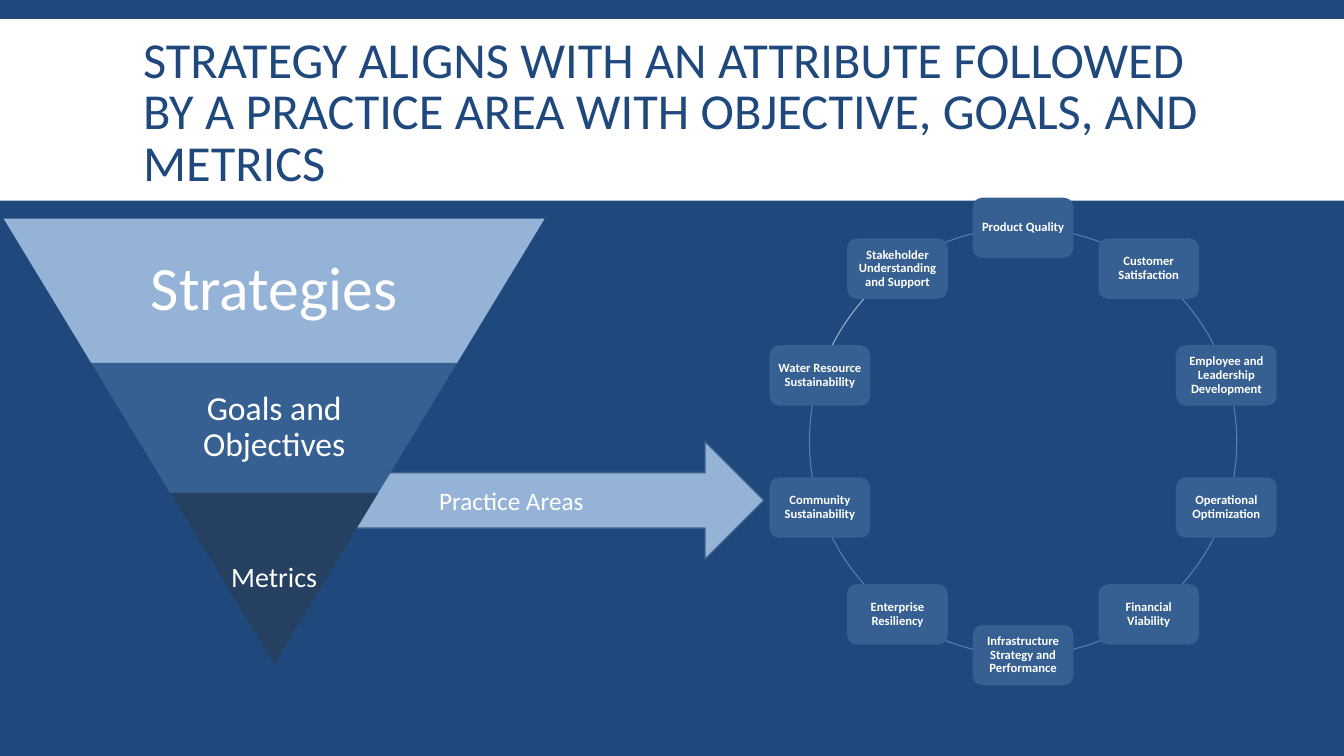
from math import cos, radians, sin

from pptx import Presentation
from pptx.dml.color import RGBColor
from pptx.enum.shapes import MSO_SHAPE
from pptx.enum.text import MSO_ANCHOR, MSO_AUTO_SIZE, PP_ALIGN
from pptx.util import Inches, Pt

NAVY = RGBColor(0x1F, 0x49, 0x7D)
WHITE = RGBColor(0xFF, 0xFF, 0xFF)
SKY = RGBColor(0x95, 0xB3, 0xD7)
STEEL = RGBColor(0x37, 0x60, 0x92)
MIDNIGHT = RGBColor(0x25, 0x40, 0x61)
OUTLINE = RGBColor(0x3A, 0x5F, 0x8C)
RING_BLUE = RGBColor(0x4F, 0x81, 0xBD)

COLUMNS, ROWS = 40, 22.5

# Funnel: name, height in rows, fill, text size, inset, text share of width
FUNNEL_CENTRE, FUNNEL_TOP, FUNNEL_SLOPE = 8.16, 6.51, 0.607
FUNNEL_LAYERS = [
    ("Strategies", 4.29, SKY, 44, 0.06, 0.65),
    ("Goals and Objectives", 3.87, STEEL, 24, 0.03, 0.65),
    ("Metrics", 5.1, MIDNIGHT, 20, 0.03, 1),
]

# Ring of attributes, clockwise from the top
RING_X, RING_Y, RING_RADIUS = 30.45, 13.14, 6.36
CARD_WIDTH, CARD_HEIGHT = 3, 1.8
ATTRIBUTES = [
    "Product Quality",
    "Customer Satisfaction",
    "Employee and Leadership Development",
    "Operational Optimization",
    "Financial Viability",
    "Infrastructure Strategy and Performance",
    "Enterprise Resiliency",
    "Community Sustainability",
    "Water Resource Sustainability",
    "Stakeholder Understanding and Support",
]
LIGHT_LINK = "Water Resource Sustainability"


def write_text(box, text, size, color=WHITE, bold=False, align=PP_ALIGN.CENTER,
               spacing=0.9, inset=None):
    frame = box.text_frame
    frame.word_wrap = True
    frame.auto_size = MSO_AUTO_SIZE.NONE
    frame.vertical_anchor = MSO_ANCHOR.MIDDLE
    if inset is not None:
        frame.margin_left = frame.margin_right = Inches(inset)
        frame.margin_top = frame.margin_bottom = Inches(inset)
    para = frame.paragraphs[0]
    para.alignment = align
    para.line_spacing = spacing
    span = para.add_run()
    span.text = text
    span.font.name = "Calibri"
    span.font.size = Pt(size)
    span.font.bold = bold
    span.font.color.rgb = color


class SlideBuilder:
    """Holds the page and its grid; positions are columns and rows."""

    def __init__(self, deck):
        self.column = deck.slide_width / COLUMNS
        self.row = deck.slide_height / ROWS
        self.page = deck.slides.add_slide(deck.slide_layouts[5])
        self.page.background.fill.solid()
        self.page.background.fill.fore_color.rgb = NAVY

    def area(self, left, top, width, height):
        return (round(left * self.column), round(top * self.row),
                round(width * self.column), round(height * self.row))

    def shape(self, kind, place, fill=None, line=None, weight=1, adjust=()):
        shape = self.page.shapes.add_shape(kind, *self.area(*place))
        shape.shadow.inherit = False
        if fill is None:
            shape.fill.background()
        else:
            shape.fill.solid()
            shape.fill.fore_color.rgb = fill
        if line is None:
            shape.line.fill.background()
        else:
            shape.line.color.rgb = line
            shape.line.width = Pt(weight)
        for index, value in enumerate(adjust):
            shape.adjustments[index] = value
        return shape

    def label(self, place, text, **style):
        box = self.page.shapes.add_textbox(*self.area(*place))
        write_text(box, text, **style)

    def title(self, place, text, **style):
        box = self.page.shapes.title
        box.left, box.top, box.width, box.height = self.area(*place)
        write_text(box, text, **style)
        # Bring the title in front of its band
        box.element.getparent().append(box.element)

    def funnel_layer(self, top, depth, layer):
        name, height, fill, size, inset, share = layer
        width = 2 * FUNNEL_SLOPE * depth
        band = self.shape(MSO_SHAPE.TRAPEZOID,
                          (FUNNEL_CENTRE - width / 2, top, width, height),
                          fill=fill, adjust=[FUNNEL_SLOPE])
        band.rotation = 180
        text_width = width * share
        self.label((FUNNEL_CENTRE - text_width / 2, top, text_width, height),
                   name, size=size, inset=inset)

    def ring_link(self, start, end, color):
        # Arc angles are stored in units of 5/3 degree
        self.shape(MSO_SHAPE.ARC,
                   (RING_X - RING_RADIUS, RING_Y - RING_RADIUS,
                    2 * RING_RADIUS, 2 * RING_RADIUS),
                   line=color, weight=0.75,
                   adjust=[start % 360 * 0.6, end % 360 * 0.6])

    def ring_card(self, angle, name):
        left = RING_X + RING_RADIUS * cos(radians(angle)) - CARD_WIDTH / 2
        top = RING_Y + RING_RADIUS * sin(radians(angle)) - CARD_HEIGHT / 2
        card = self.shape(MSO_SHAPE.ROUNDED_RECTANGLE,
                          (left, top, CARD_WIDTH, CARD_HEIGHT), fill=STEEL)
        write_text(card, name, size=9, bold=True, inset=0.04)


def main():
    deck = Presentation()
    deck.slide_width, deck.slide_height = Inches(13.333), Inches(7.5)
    builder = SlideBuilder(deck)

    # Title on its white band
    builder.shape(MSO_SHAPE.RECTANGLE, (0, 0.57, COLUMNS, 5.4), fill=WHITE)
    builder.title((3.96, 0.93, 32.1, 4.95),
                  "STRATEGY ALIGNS WITH AN ATTRIBUTE FOLLOWED BY A PRACTICE "
                  "AREA WITH OBJECTIVE, GOALS, AND METRICS",
                  size=36, color=NAVY, align=PP_ALIGN.LEFT, spacing=0.85)

    # Arrow from the funnel to the ring
    arrow = builder.shape(MSO_SHAPE.STRIPED_RIGHT_ARROW,
                          (7.98, 13.14, 14.76, 3.51),
                          fill=SKY, line=OUTLINE, adjust=[0.471, 0.5])
    write_text(arrow, "Practice Areas", size=18, spacing=1.0)

    # Funnel, narrowing to its tip
    top = FUNNEL_TOP
    depth = sum(layer[1] for layer in FUNNEL_LAYERS)
    for layer in FUNNEL_LAYERS:
        builder.funnel_layer(top, depth, layer)
        top += layer[1]
        depth -= layer[1]

    # Ring: links first, cards on top
    step = 360 / len(ATTRIBUTES)
    angles = [270 + step * index for index in range(len(ATTRIBUTES))]
    for angle, name in zip(angles, ATTRIBUTES):
        color = SKY if name == LIGHT_LINK else RING_BLUE
        builder.ring_link(angle, angle + step, color)
    for angle, name in zip(angles, ATTRIBUTES):
        builder.ring_card(angle, name)

    deck.save("out.pptx")


if __name__ == "__main__":
    main()
